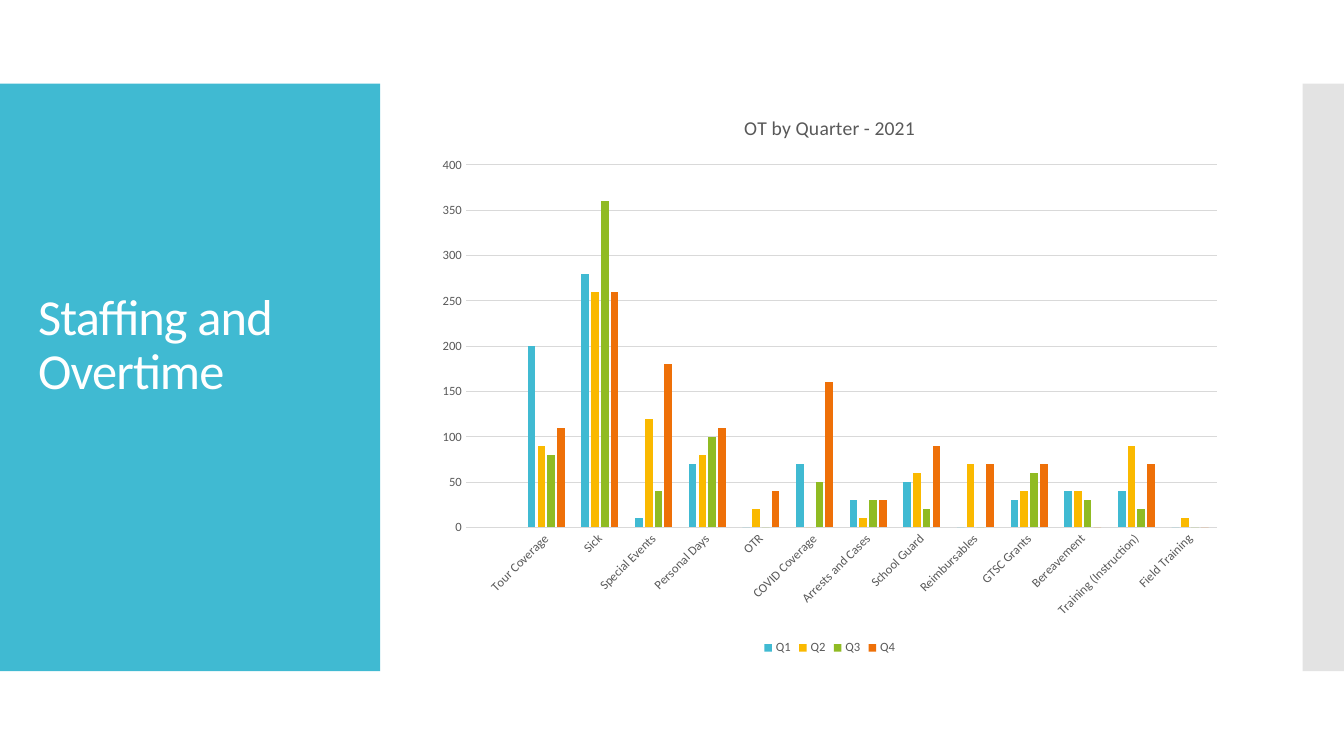
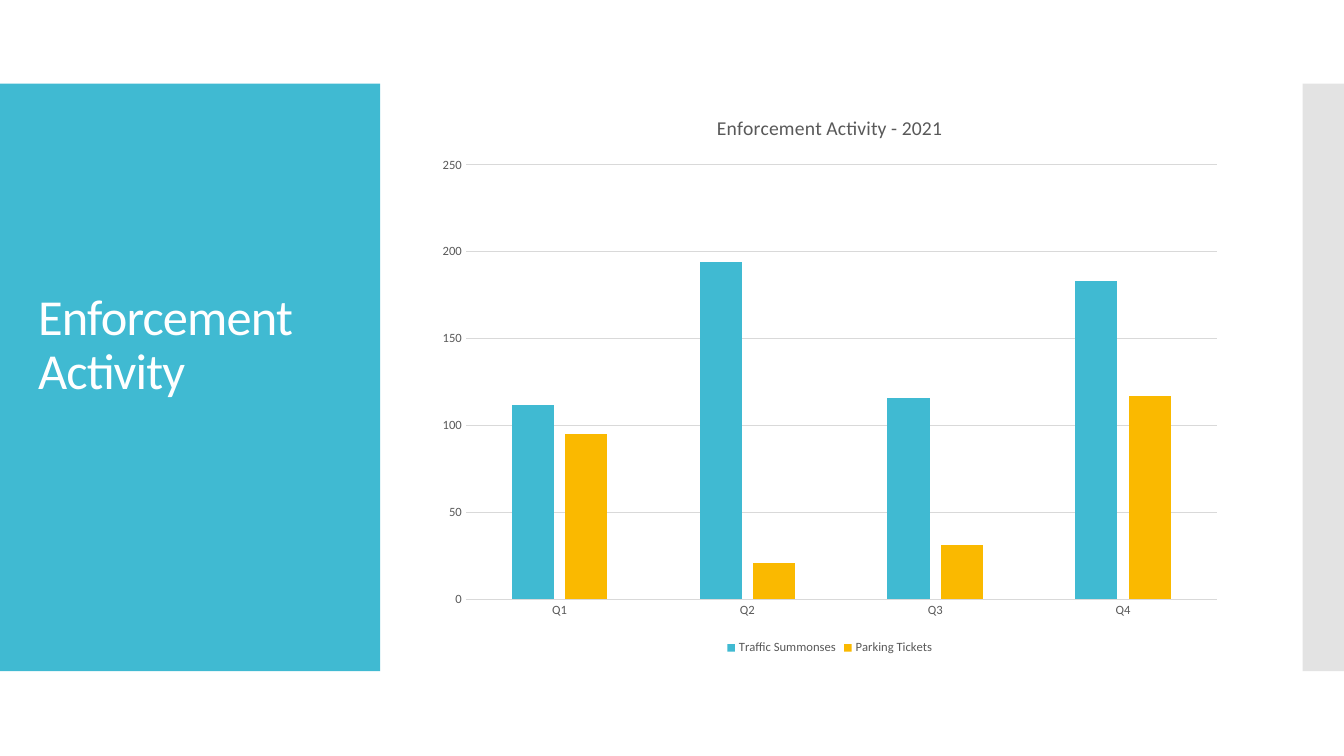
from lxml import etree
from pptx import Presentation
from pptx.chart.data import CategoryChartData
from pptx.dml.color import RGBColor
from pptx.enum.chart import XL_CHART_TYPE as ChartType, XL_LEGEND_POSITION as LegendPos
from pptx.enum.chart import XL_TICK_MARK as TickMark
from pptx.enum.shapes import MSO_SHAPE as Shape
from pptx.enum.text import MSO_ANCHOR as Anchor
from pptx.oxml.ns import qn
from pptx.util import Inches, Pt

FONT = "Calibri"
WHITE = RGBColor(0xFF, 0xFF, 0xFF)
TEAL = RGBColor(0x40, 0xBA, 0xD2)
AMBER = RGBColor(0xFA, 0xB9, 0x00)
GREEN = RGBColor(0x90, 0xBB, 0x23)
ORANGE = RGBColor(0xEE, 0x70, 0x08)
BAND_GRAY = RGBColor(0xC8, 0xC8, 0xC8)
GRID_GRAY = RGBColor(0xD9, 0xD9, 0xD9)
TEXT_GRAY = RGBColor(0x59, 0x59, 0x59)
SERIES_COLORS = [TEAL, AMBER, GREEN, ORANGE]
AUTO_ROTATION = "-60000000"

# Boxes: left, top, width, height in inches
SLIDE_W, SLIDE_H = 13.33, 7.5
BAND_TOP, BAND_H = 0.83, 5.83
TITLE_BAND = (0, BAND_TOP, 3.77, BAND_H)
EDGE_BAND = (SLIDE_W - 0.41, BAND_TOP, 0.41, BAND_H)
CHART_BOX = (4.23, 0.93, 8, 5.61)

OVERTIME = {
    "heading": "Staffing and Overtime",
    "chart_title": "OT by Quarter - 2021",
    "categories": ["", "Tour Coverage", "Sick", "Special Events", "Personal Days", "OTR",
                   "COVID Coverage", "Arrests and Cases", "School Guard", "Reimbursables",
                   "GTSC Grants", "Bereavement", "Training (Instruction)", "Field Training"],
    "series": {
        "Q1": [None, 200, 280, 10, 70, 0, 70, 30, 50, 0, 30, 40, 40, 0],
        "Q2": [None, 90, 260, 120, 80, 20, 0, 10, 60, 70, 40, 40, 90, 10],
        "Q3": [None, 80, 360, 40, 100, 0, 50, 30, 20, 0, 60, 30, 20, 0],
        "Q4": [None, 110, 260, 180, 110, 40, 160, 30, 90, 70, 70, 0, 70, 0],
    },
    "axis_max": 400,
}
ENFORCEMENT = {
    "heading": "Enforcement Activity",
    "chart_title": "Enforcement Activity - 2021",
    "categories": ["Q1", "Q2", "Q3", "Q4"],
    "series": {
        "Traffic Summonses": [112, 194, 116, 183],
        "Parking Tickets": [95, 21, 31, 117],
    },
    "axis_max": 250,
}


def inches(box):
    return [Inches(length) for length in box]


def style_font(font, size, color):
    font.name, font.size, font.bold = FONT, Pt(size), False
    font.color.rgb = color


def add_band(slide, box, color, opacity=100):
    band = slide.shapes.add_shape(Shape.RECTANGLE, *inches(box))
    band.shadow.inherit = False
    band.fill.solid()
    band.fill.fore_color.rgb = color
    band.line.fill.background()
    if opacity < 100:
        tint = band.fill._xPr.find(".//" + qn("a:srgbClr"))
        etree.SubElement(tint, qn("a:alpha"), val=str(opacity * 1000))


def add_heading(slide, band_box, text):
    """Heading set inside the title band, a little above its middle."""
    left, top, width, height = band_box
    box = (left + 0.28, top + 0.4, width - 0.55, height - 1.42)
    frame = slide.shapes.add_textbox(*inches(box)).text_frame
    frame.word_wrap = True
    frame.vertical_anchor = Anchor.MIDDLE
    heading = frame.paragraphs[0]
    heading.text = text
    heading.line_spacing = 0.9
    style_font(heading.font, 36, WHITE)
    heading.runs[0].font._element.set("spc", "-60")


def add_column_chart(slide, box, content):
    data = CategoryChartData()
    data.categories = content["categories"]
    for name, values in content["series"].items():
        data.add_series(name, values)
    chart = slide.shapes.add_chart(ChartType.COLUMN_CLUSTERED, *inches(box), data).chart
    style_font(chart.font, 10, TEXT_GRAY)

    # Title and legend
    chart.has_title = True
    title = chart.chart_title.text_frame.paragraphs[0]
    title.text = content["chart_title"]
    style_font(title.font, 14, TEXT_GRAY)
    chart.chart_title.include_in_layout = False
    chart.has_legend = True
    chart.legend.position = LegendPos.BOTTOM
    chart.legend.include_in_layout = False
    style_font(chart.legend.font, 9, TEXT_GRAY)

    # Axes and gridlines
    for axis in (chart.category_axis, chart.value_axis):
        axis.major_tick_mark = axis.minor_tick_mark = TickMark.NONE
        style_font(axis.tick_labels.font, 9, TEXT_GRAY)
    chart.value_axis.format.line.fill.background()
    chart.value_axis.minimum_scale = 0
    chart.value_axis.maximum_scale = content["axis_max"]
    chart.value_axis.major_unit = 50
    for rule in (chart.category_axis.format.line, chart.value_axis.major_gridlines.format.line):
        rule.color.rgb = GRID_GRAY
        rule.width = Pt(0.75)
    label_body = chart.category_axis._element.find(qn("c:txPr")).find(qn("a:bodyPr"))
    label_body.set("rot", AUTO_ROTATION)

    # Columns
    plot = chart.plots[0]
    plot.gap_width, plot.overlap = 219, -27
    plot.vary_by_categories = False
    for series, color in zip(plot.series, SERIES_COLORS):
        series.format.fill.solid()
        series.format.fill.fore_color.rgb = color
        series.invert_if_negative = False


def add_chart_slide(prs, content):
    slide = prs.slides.add_slide(prs.slide_layouts[6])
    add_band(slide, TITLE_BAND, TEAL)
    add_band(slide, EDGE_BAND, BAND_GRAY, opacity=50)
    add_heading(slide, TITLE_BAND, content["heading"])
    add_column_chart(slide, CHART_BOX, content)


def main():
    prs = Presentation()
    prs.slide_width, prs.slide_height = Inches(SLIDE_W), Inches(SLIDE_H)
    for content in (OVERTIME, ENFORCEMENT):
        add_chart_slide(prs, content)
    prs.save("out.pptx")


if __name__ == "__main__":
    main()
